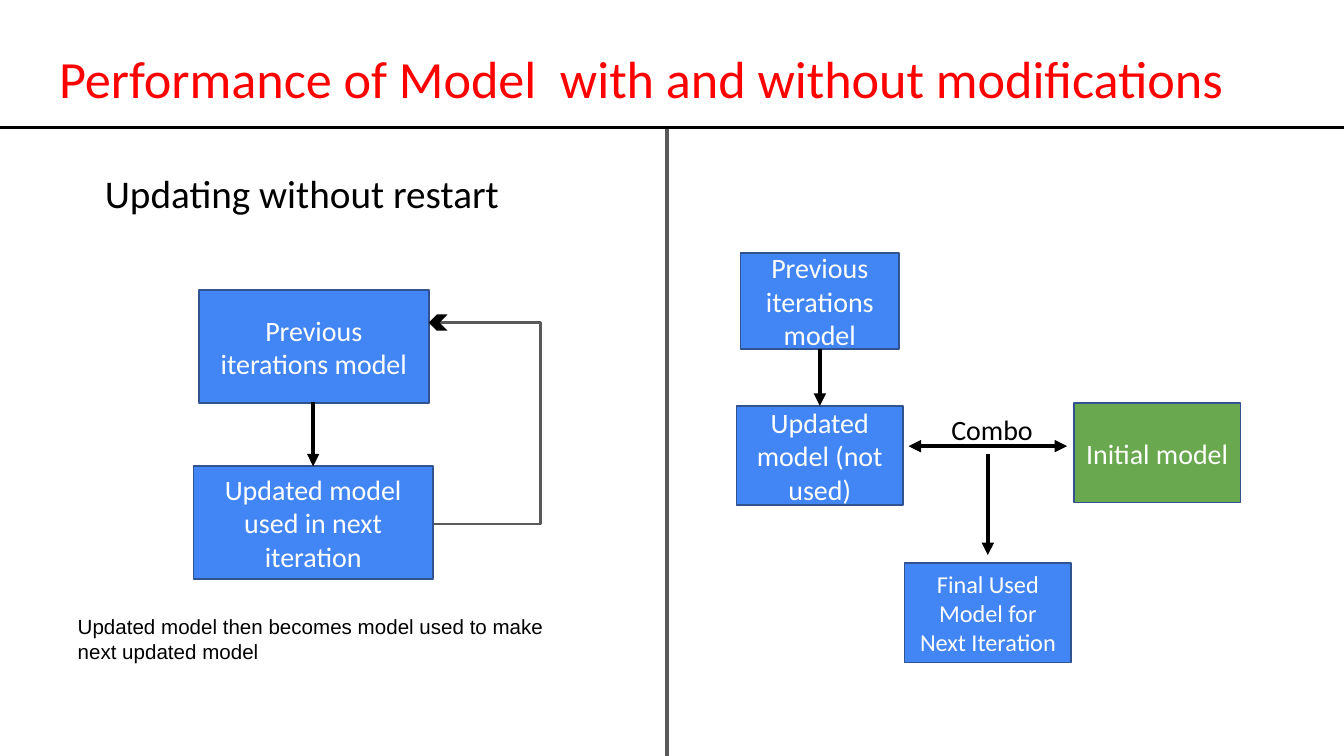
from lxml import etree
from pptx import Presentation
from pptx.dml.color import RGBColor
from pptx.enum.shapes import MSO_CONNECTOR, MSO_SHAPE
from pptx.enum.text import MSO_ANCHOR, MSO_AUTO_SIZE, PP_ALIGN
from pptx.oxml.ns import qn
from pptx.util import Inches, Pt

STRAIGHT = MSO_CONNECTOR.STRAIGHT
RECT, CHEVRON = MSO_SHAPE.RECTANGLE, MSO_SHAPE.CHEVRON
TOP, MIDDLE = MSO_ANCHOR.TOP, MSO_ANCHOR.MIDDLE
LEFT, CENTER = PP_ALIGN.LEFT, PP_ALIGN.CENTER
NO_AUTOFIT = MSO_AUTO_SIZE.NONE

WIDTH = 10
HEIGHT = WIDTH * 9 / 16
THEME = {
    "black": "000000", "white": "FFFFFF", "red": "FF0000", "gray": "595959",
    "blue": "4285F4", "green": "6AA84F", "border": "31538F",
    "body_font": "Calibri", "note_font": "Arial",
    "title": 28, "heading": 21, "box": 15, "small_box": 13, "note": 11,
    "border_width": 1, "thin": 1.5, "thick": 2.25,
}
TIGHT = (0.07, 0.04)
LOOSE = (0.1, 0.1)

# Text: wording, (left, top, width, height), size, font, colour, insets, anchor
TEXTS = [
    ("Performance of Model  with and without modifications",
     (0.37, 0.06, 9.26, 1.09), "title", "body_font", "red", TIGHT, MIDDLE),
    ("Updating without restart",
     (0.71, 1.22, 3.89, 0.67), "heading", "body_font", "black", TIGHT, TOP),
    ("Updated model then becomes model used to make next updated model",
     (0.48, 4.47, 3.7, 0.57), "note", "note_font", "black", LOOSE, TOP),
    ("Combo",
     (6.98, 2.97, 0.84, 0.45), "box", "body_font", "black", LOOSE, TOP),
]

# Boxes: wording, (left, top, width, height), fill, size
BOXES = [
    ("Previous iterations model", (1.48, 2.16, 1.71, 0.84), "blue", "box"),
    ("Updated model used in next iteration", (1.44, 3.47, 1.78, 0.84), "blue", "box"),
    ("Previous iterations model", (5.51, 1.88, 1.18, 0.72), "blue", "box"),
    ("Updated model (not used)", (5.48, 3.02, 1.24, 0.74), "blue", "box"),
    ("Initial model", (7.99, 3, 1.24, 0.74), "green", "box"),
    ("Final Used Model for Next Iteration", (6.73, 4.19, 1.24, 0.74), "blue", "small_box"),
]

# Lines: start, end, colour, width, arrowheads
DIVIDERS = [
    ((4.96, 0.95), (4.96, HEIGHT), "gray", "thick", ()),
    ((0, 0.95), (WIDTH, 0.95), "black", "thin", ()),
]
ARROWS = [
    ((2.33, 2.99), (2.33, 3.47), "black", "thick", ("tailEnd",)),
    ((6.1, 2.6), (6.1, 3.02), "black", "thick", ("tailEnd",)),
    ((6.76, 3.32), (7.94, 3.32), "black", "thick", ("headEnd", "tailEnd")),
    ((7.35, 3.38), (7.35, 4.13), "black", "thick", ("tailEnd",)),
]
LOOP = [(3.23, 3.9), (4.02, 3.9), (4.02, 2.4), (3.26, 2.4)]
LOOP_HEAD = (3.19, 2.34, 0.14, 0.12)


def color(name):
    return RGBColor.from_string(THEME[name])


def inches(values):
    return [Inches(v) for v in values]


def set_line(line, name, width):
    line.color.rgb = color(name)
    line.width = Pt(THEME[width])


def write(sp, text, size, font, ink, insets, anchor, align):
    tf = sp.text_frame
    x, y = inches(insets)
    frame = {"word_wrap": True, "auto_size": NO_AUTOFIT,
             "vertical_anchor": anchor, "margin_left": x, "margin_right": x,
             "margin_top": y, "margin_bottom": y}
    for key, value in frame.items():
        setattr(tf, key, value)
    p = tf.paragraphs[0]
    p.alignment = align
    r = p.add_run()
    r.text = text
    for key, value in {"name": THEME[font], "size": Pt(THEME[size])}.items():
        setattr(r.font, key, value)
    r.font.color.rgb = color(ink)
    return p


def add_text(s, text, place, size, font, ink, insets, anchor):
    sp = s.shapes.add_textbox(*inches(place))
    p = write(sp, text, size, font, ink, insets, anchor, LEFT)
    if size == "title":
        p.line_spacing = 0.9


def add_box(s, text, place, fill, size):
    sp = s.shapes.add_shape(RECT, *inches(place))
    sp.shadow.inherit = False
    sp.fill.solid()
    sp.fill.fore_color.rgb = color(fill)
    set_line(sp.line, "border", "border_width")
    write(sp, text, size, "body_font", "white", TIGHT, MIDDLE, CENTER)


def add_line(s, start, end, ink, width, heads):
    cn = s.shapes.add_connector(STRAIGHT, *inches(start + end))
    set_line(cn.line, ink, width)
    spPr = cn._element.spPr
    for head in heads:
        etree.SubElement(spPr.find(qn("a:ln")), qn("a:" + head), type="triangle")
    etree.SubElement(spPr, qn("a:effectLst"))


def add_loop(s):
    points = [tuple(inches(pt)) for pt in LOOP]
    builder = s.shapes.build_freeform(*points[0])
    builder.add_line_segments(points[1:], close=False)
    loop = builder.convert_to_shape()
    loop.shadow.inherit = False
    loop.fill.background()
    set_line(loop.line, "gray", "thin")

    head = s.shapes.add_shape(CHEVRON, *inches(LOOP_HEAD))
    head.shadow.inherit = False
    head.rotation = 180
    head.fill.solid()
    head.fill.fore_color.rgb = color("black")
    head.line.fill.background()


def main():
    prs = Presentation()
    prs.slide_width, prs.slide_height = inches((WIDTH, HEIGHT))
    s = prs.slides.add_slide(prs.slide_layouts[6])

    # Dividers, then the two diagrams, then their connections and labels
    for divider in DIVIDERS:
        add_line(s, *divider)
    for box in BOXES:
        add_box(s, *box)
    for arrow in ARROWS:
        add_line(s, *arrow)
    add_loop(s)
    for text in TEXTS:
        add_text(s, *text)

    prs.save("out.pptx")


if __name__ == "__main__":
    main()
